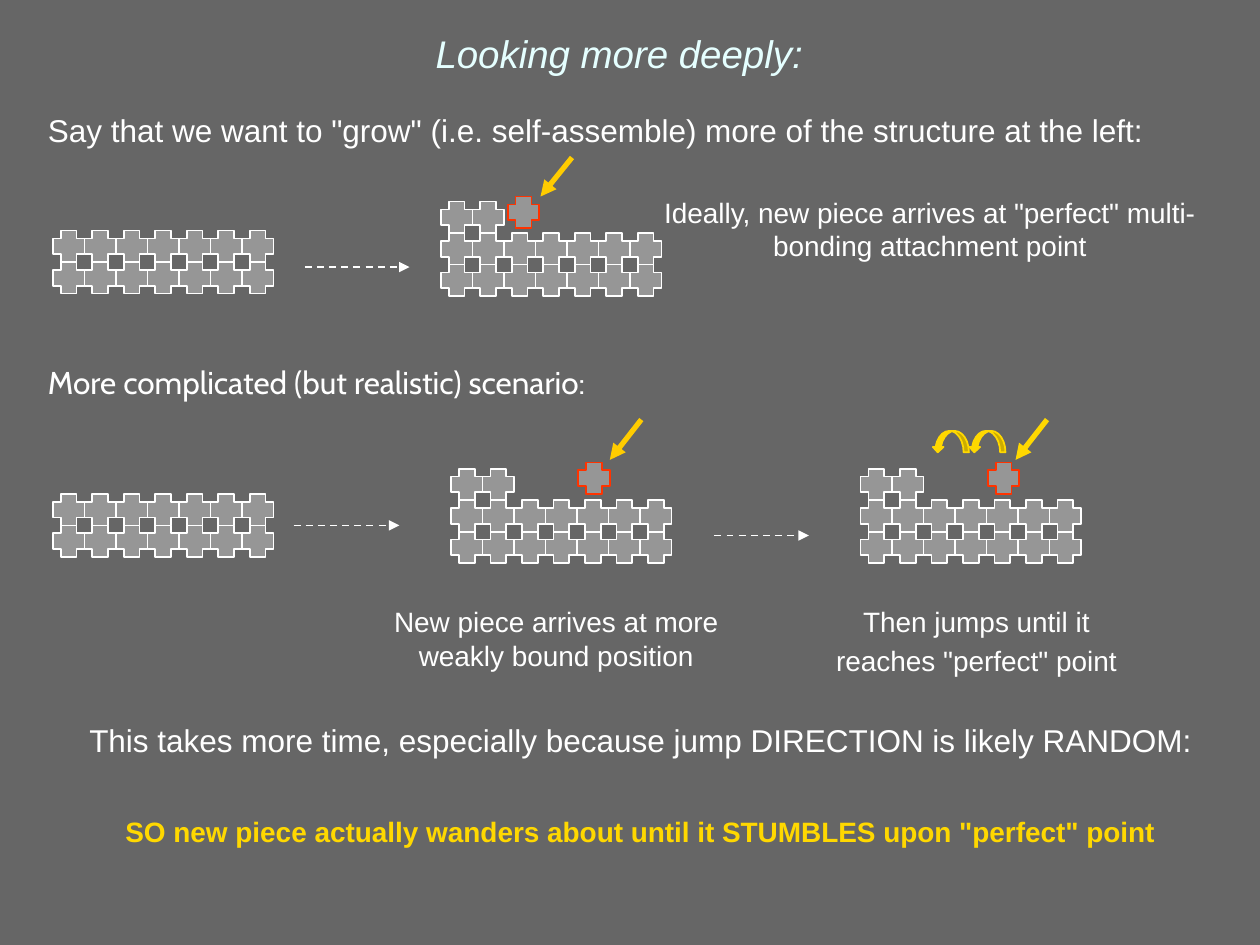
"""Build a slide on how self-assembled pieces find their attachment points."""
import pptx
import pptx.dml.color
import pptx.enum.dml
import pptx.enum.shapes
import pptx.enum.text
import pptx.oxml
import pptx.oxml.ns
import pptx.util

SCALE = 9144
PIECE = 25
COLORS = {
    "background": "666666",
    "title": "E5FFFF",
    "white": "FFFFFF",
    "piece": "969696",
    "new": "FF3300",
    "amber": "FFCC00",
    "gold": "FFD800",
}
RGB = {name: pptx.dml.color.RGBColor.from_string(value) for name, value in COLORS.items()}
SHAPES = pptx.enum.shapes.MSO_SHAPE
LEFT = pptx.enum.text.PP_ALIGN.LEFT
CENTER = pptx.enum.text.PP_ALIGN.CENTER


def add_solid(shapes, kind, place, fill, outline):
    solid = shapes.add_shape(kind, *[length * SCALE for length in place])
    solid.shadow.inherit = False
    solid.fill.solid()
    solid.fill.fore_color.rgb = RGB[fill]
    solid.line.color.rgb = RGB[outline]
    solid.line.width = pptx.util.Pt(1)
    return solid


def add_arrow(shapes, ends, color, width, dashed=False):
    arrow = shapes.add_connector(
        pptx.enum.shapes.MSO_CONNECTOR.STRAIGHT, *[length * SCALE for length in ends])
    arrow.line.color.rgb = RGB[color]
    arrow.line.width = pptx.util.Pt(width)
    if dashed:
        arrow.line.dash_style = pptx.enum.dml.MSO_LINE.DASH
    properties = arrow._element.spPr
    outline = properties.find(pptx.oxml.ns.qn("a:ln"))
    namespace = pptx.oxml.ns.nsdecls("a")
    outline.append(pptx.oxml.parse_xml(f'<a:tailEnd {namespace} type="triangle"/>'))
    properties.append(pptx.oxml.parse_xml(f"<a:effectLst {namespace}/>"))


deck = pptx.Presentation()
deck.slide_width = 1000 * SCALE
deck.slide_height = 750 * SCALE
page = deck.slides.add_slide(deck.slide_layouts[6])
page.background.fill.solid()
page.background.fill.fore_color.rgb = RGB["background"]

structures = [
    {"left": 42, "rows": [(183, 7), (208, 7)]},
    {"left": 350, "rows": [(160, 2), (185, 7), (210, 7)],
     "new": (403, 156), "pointer": (454, 125, 429, 156), "color": "amber"},
    {"left": 683, "rows": [(372, 2), (397, 7), (422, 7)],
     "new": (784, 367), "pointer": (831, 333, 806, 365), "color": "gold",
     "jumps": (769, 740)},
    {"left": 358, "rows": [(372, 2), (397, 7), (422, 7)],
     "new": (459, 367), "pointer": (509, 333, 484, 365), "color": "amber"},
    {"left": 42, "rows": [(392, 7), (417, 7)]},
]
for structure in structures:
    members = page.shapes.add_group_shape().shapes
    for top, count in structure["rows"]:
        for column in range(count):
            place = (structure["left"] + column * PIECE, top, PIECE, PIECE)
            add_solid(members, SHAPES.CROSS, place, "piece", "white")
    if "new" in structure:
        add_solid(members, SHAPES.CROSS, (*structure["new"], PIECE, PIECE), "piece", "new")
        add_arrow(members, structure["pointer"], structure["color"], 3)
    for left in structure.get("jumps", ()):
        jump = add_solid(members, SHAPES.CURVED_DOWN_ARROW, (left, 342, 29, 17), "gold", "gold")
        jump._element.spPr.find(pptx.oxml.ns.qn("a:xfrm")).set("flipH", "1")

for ends in [(242, 212, 325, 212), (233, 417, 317, 417), (567, 425, 642, 425)]:
    add_arrow(page.shapes, ends, "white", 1, dashed=True)

plain = {"size": 18, "color": "white", "font": "Arial"}
caption = {**plain, "size": 16}
texts = [
    ((25, 17, 933, 50), CENTER, [
        ("Looking more deeply:", {**plain, "size": 22, "color": "title", "italic": True})]),
    ((33, 83, 942, 41), LEFT, [
        ('Say that we want to "grow" (i.e. self-assemble) more of the structure at the left:',
         plain)]),
    ((517, 150, 442, 81), CENTER, [
        ('Ideally, new piece arrives at "perfect" multi-bonding attachment point', caption)]),
    ((33, 283, 942, 41), LEFT, [
        ("More complicated (but realistic) scenario:", {**plain, "font": "Cabin"})]),
    ((283, 475, 317, 111), CENTER, [
        ("New piece arrives at more weakly bound position", caption)]),
    ((625, 475, 300, 138), CENTER, [
        ("Then jumps until it", caption),
        ('reaches "perfect" point', {**caption, "before": 3})]),
    ((50, 567, 917, 109), CENTER, [
        ("This takes more time, especially because jump DIRECTION is likely RANDOM:", plain),
        ('SO new piece actually wanders about until it STUMBLES upon "perfect" point',
         {**caption, "color": "gold", "bold": True, "before": 32})]),
]
for place, align, paragraphs in texts:
    box = page.shapes.add_textbox(*[length * SCALE for length in place])
    frame = box.text_frame
    frame.word_wrap = True
    frame.margin_left = frame.margin_right = 5 * SCALE
    frame.margin_top = frame.margin_bottom = 5 * SCALE
    if place[1] == 17:
        frame.vertical_anchor = pptx.enum.text.MSO_ANCHOR.MIDDLE
    for index, (words, style) in enumerate(paragraphs):
        para = frame.add_paragraph() if index else frame.paragraphs[0]
        para.alignment = align
        para.space_before = pptx.util.Pt(style.get("before", 0))
        span = para.add_run()
        span.text = words
        span.font.name = style["font"]
        span.font.size = pptx.util.Pt(style["size"])
        span.font.color.rgb = RGB[style["color"]]
        span.font.bold = style.get("bold", False)
        span.font.italic = style.get("italic", False)

deck.save("out.pptx")
